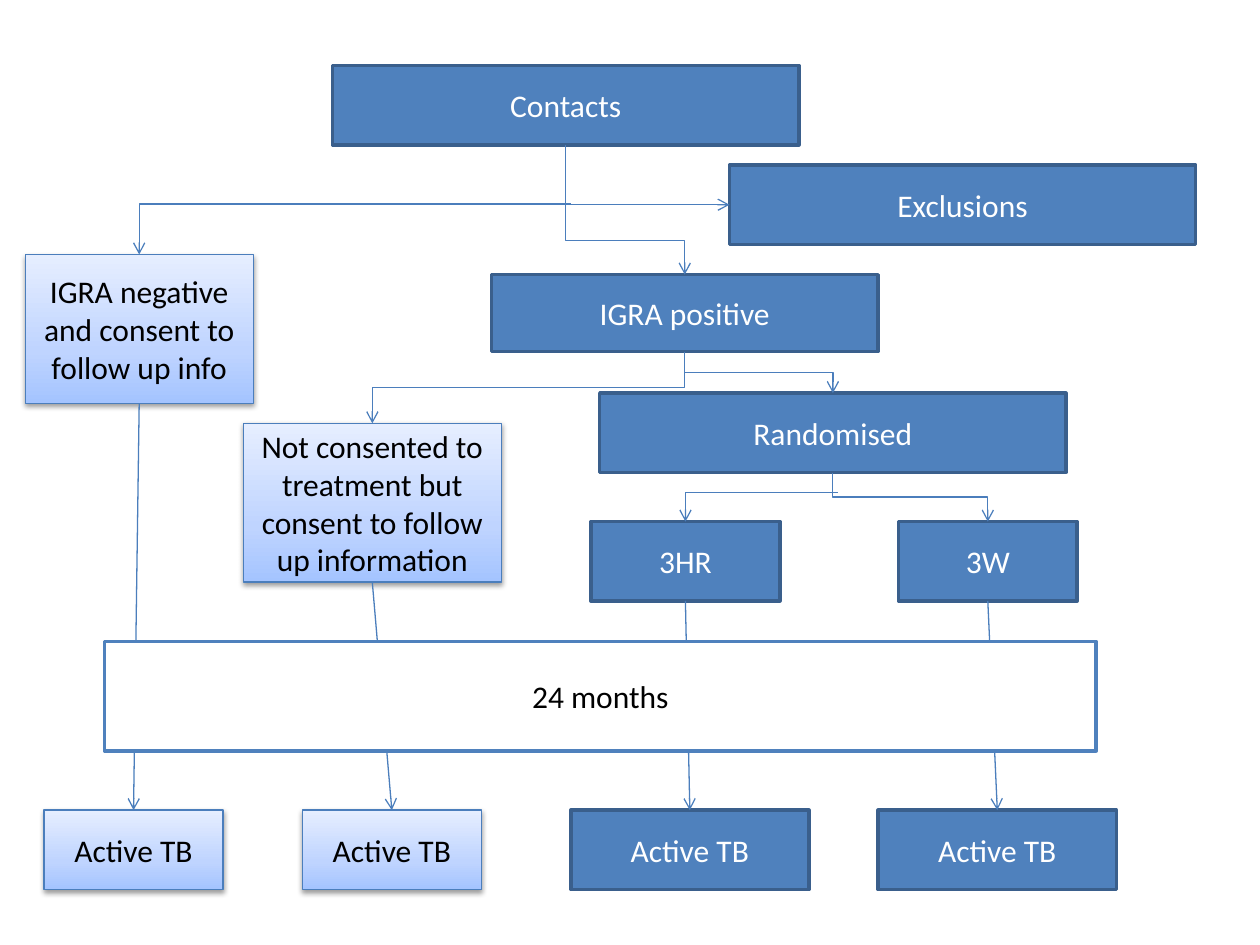
import copy

import pptx
import pptx.dml.color
import pptx.enum.shapes
import pptx.enum.text
import pptx.oxml
import pptx.oxml.ns
import pptx.util
from pptx.util import Inches

COLORS = {
    "blue": "4F81BD",
    "blue_edge": "3A5F8C",
    "connector": "4B7EBC",
    "white": "FFFFFF",
    "black": "000000",
}
GRADIENT = [(0, "A4C4FF"), (0.35, "BFD4FF"), (1, "E6EEFF")]
# Style: fill (None for the gradient with shadow), line, line width, text color
STYLES = {
    "solid": ("blue", "blue_edge", 2, "white"),
    "light": (None, "connector", 0.75, "black"),
    "outline": ("white", "blue", 2, "black"),
}
SHADOW = (
    '<a:outerShdw %s blurRad="39370" dist="20320" dir="5400000" rotWithShape="0">'
    '<a:srgbClr val="000000"><a:alpha val="38000"/></a:srgbClr></a:outerShdw>'
    % pptx.oxml.ns.nsdecls("a")
)
ARROWHEAD = '<a:tailEnd %s type="arrow"/>' % pptx.oxml.ns.nsdecls("a")
NO_EFFECTS = "<a:effectLst %s/>" % pptx.oxml.ns.nsdecls("a")
TOP, LEFT, BOTTOM = 0, 1, 2

presentation = pptx.Presentation()
presentation.slide_width = Inches(10)
presentation.slide_height = Inches(7.5)
slide = presentation.slides.add_slide(presentation.slide_layouts[6])
rgb = pptx.dml.color.RGBColor.from_string


def add_box(text, left, top, width, height=0.63, style="solid", size=18):
    fill, line, line_width, text_color = STYLES[style]
    shape = slide.shapes.add_shape(
        pptx.enum.shapes.MSO_SHAPE.RECTANGLE,
        Inches(left), Inches(top), Inches(width), Inches(height))
    shape.line.color.rgb = rgb(COLORS[line])
    shape.line.width = pptx.util.Pt(line_width)
    shape.shadow.inherit = False
    if fill:
        shape.fill.solid()
        shape.fill.fore_color.rgb = rgb(COLORS[fill])
    else:
        shape.fill.gradient()
        shape.fill.gradient_angle = 90
        first_stop = shape._element.spPr.find(".//" + pptx.oxml.ns.qn("a:gs"))
        first_stop.addnext(copy.deepcopy(first_stop))
        for stop, (position, color) in zip(shape.fill.gradient_stops, GRADIENT):
            stop.position = position
            stop.color.rgb = rgb(color)
        effects = shape._element.spPr.find(pptx.oxml.ns.qn("a:effectLst"))
        effects.append(pptx.oxml.parse_xml(SHADOW))
    frame = shape.text_frame
    frame.word_wrap = True
    frame.vertical_anchor = pptx.enum.text.MSO_ANCHOR.MIDDLE
    paragraph = frame.paragraphs[0]
    paragraph.alignment = pptx.enum.text.PP_ALIGN.CENTER
    run = paragraph.add_run()
    run.text = text
    run.font.name = "Calibri"
    run.font.size = pptx.util.Pt(size)
    run.font.color.rgb = rgb(COLORS[text_color])
    return shape


def add_arrow(kind, x1, y1, x2, y2):
    connector = slide.shapes.add_connector(kind, x1, y1, x2, y2)
    connector.line.color.rgb = rgb(COLORS["connector"])
    connector.line.width = pptx.util.Pt(0.75)
    connector.line._get_or_add_ln().append(pptx.oxml.parse_xml(ARROWHEAD))
    connector._element.spPr.append(pptx.oxml.parse_xml(NO_EFFECTS))
    return connector


# Boxes, from the top of the flow to the bottom
contacts = add_box("Contacts", 2.64, 0.52, 3.7)
exclusions = add_box("Exclusions", 5.79, 1.31, 3.7)
negative = add_box("IGRA negative and consent to follow up info",
                   0.2, 2.02, 1.81, 1.18, style="light")
positive = add_box("IGRA positive", 3.9, 2.18, 3.07, 0.61)
randomised = add_box("Randomised", 4.76, 3.12, 3.7)
not_consented = add_box(
    "Not consented to treatment but consent to follow up information",
    1.93, 3.36, 2.05, 1.26, style="light")
arm_3hr = add_box("3HR", 4.69, 4.14, 1.5)
arm_3w = add_box("3W", 7.13, 4.14, 1.42)
outcomes = [
    add_box("Active TB", left, 6.43, width, style=style)
    for left, width, style in [(0.35, 1.42, "light"), (2.4, 1.42, "light"),
                               (4.53, 1.89, "solid"), (6.97, 1.89, "solid")]
]

# Straight arrows from each group to its outcome
STRAIGHT = pptx.enum.shapes.MSO_CONNECTOR.STRAIGHT
ELBOW = pptx.enum.shapes.MSO_CONNECTOR.ELBOW
for group, outcome in zip([negative, not_consented, arm_3hr, arm_3w], outcomes):
    arrow = add_arrow(STRAIGHT, 0, 0, 0, 0)
    arrow.begin_connect(group, BOTTOM)
    arrow.end_connect(outcome, TOP)

exclusion_y = exclusions.top + exclusions.height // 2
arrow = add_arrow(STRAIGHT, Inches(4.53), exclusion_y, exclusions.left, exclusion_y)
arrow.end_connect(exclusions, LEFT)

# Elbows that leave a box downwards, turn at a share of the drop, and go down again
for source, target, bend in [
    (contacts, positive, 0.735),
    (positive, randomised, 0.5),
    (positive, not_consented, 0.5),
    (randomised, arm_3w, 0.5),
]:
    x1, y1 = source.left + source.width // 2, source.top + source.height
    x2, y2 = target.left + target.width // 2, target.top
    arrow = add_arrow(ELBOW, x1, y1, x2, y2)
    arrow.begin_connect(source, BOTTOM)
    arrow.end_connect(target, TOP)
    # The elbow is stored lying on its side and turned by a quarter
    run_length, drop = abs(x2 - x1), y2 - y1
    arrow.left, arrow.top = (x1 + x2 - drop) // 2, (y1 + y2 - run_length) // 2
    arrow.width, arrow.height = drop, run_length
    transform = arrow._element.spPr.xfrm
    transform.rot = 270 if x2 > x1 else 90
    transform.flipH = x2 > x1
    guides = arrow._element.spPr.find(".//" + pptx.oxml.ns.qn("a:avLst"))
    guides.append(pptx.oxml.parse_xml(
        '<a:gd %s name="adj1" fmla="val %d"/>'
        % (pptx.oxml.ns.nsdecls("a"), bend * 100000)))

# Elbows that go left, then down
for x, y, target in [(4.53, 1.62, negative), (6.65, 3.91, arm_3hr)]:
    arrow = add_arrow(ELBOW, Inches(x), Inches(y),
                      target.left + target.width // 2, target.top)
    geometry = arrow._element.spPr.find(pptx.oxml.ns.qn("a:prstGeom"))
    geometry.set("prst", "bentConnector2")
    transform = arrow._element.spPr.xfrm
    transform.rot, transform.flipH, transform.flipV = 180, False, True

# Follow-up period, in front of the arrows
add_box("24 months", 0.83, 5.09, 7.87, 0.87, style="outline")

presentation.save("out.pptx")
